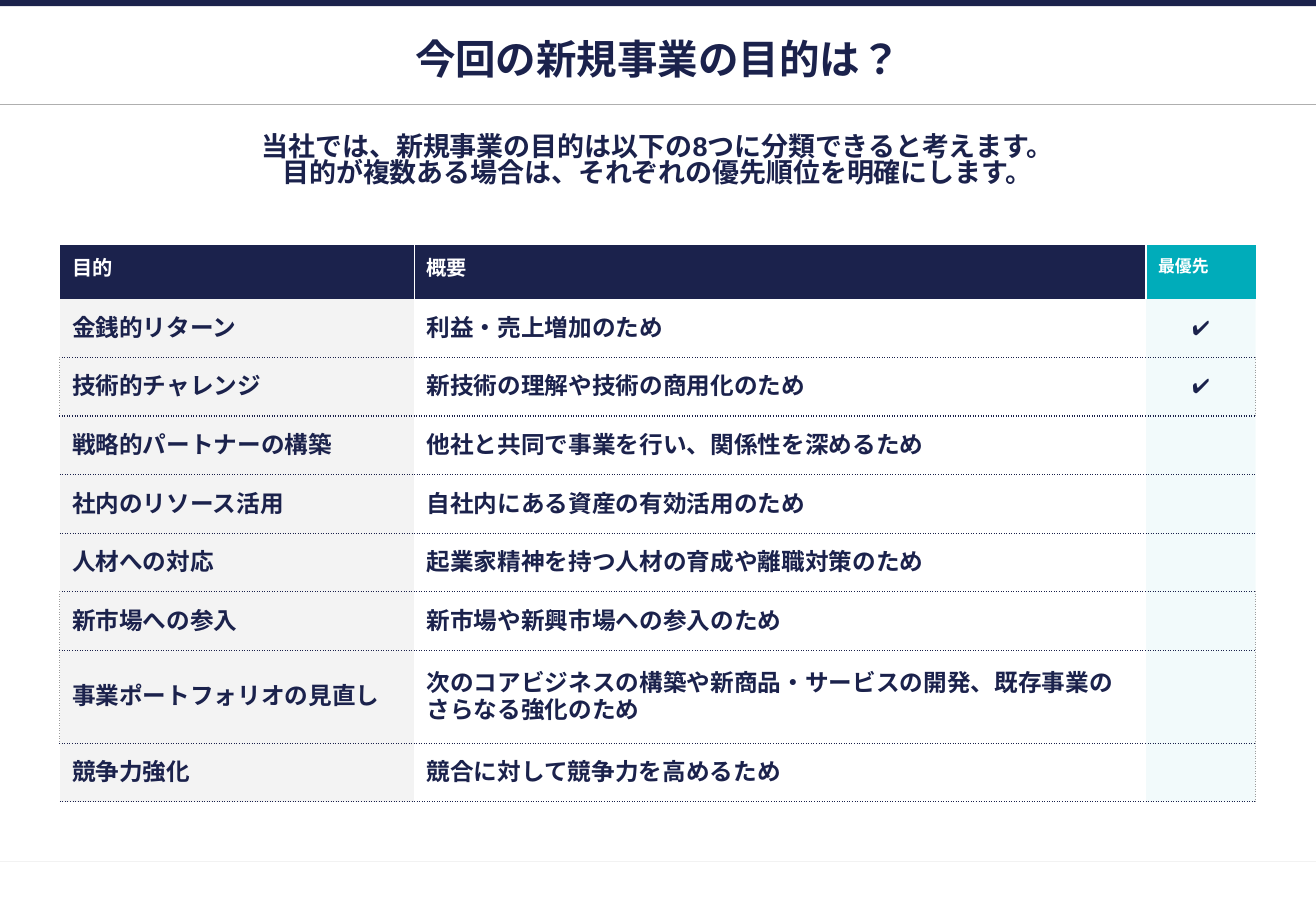
from lxml.etree import SubElement
from pptx import Presentation
from pptx.dml.color import RGBColor
from pptx.enum.lang import MSO_LANGUAGE_ID as Lang
from pptx.enum.shapes import MSO_CONNECTOR as Connector, MSO_SHAPE as Shape
from pptx.enum.text import MSO_ANCHOR as Anchor, MSO_AUTO_SIZE as AutoSize, PP_ALIGN as Align
from pptx.oxml.ns import qn
from pptx.util import Pt

TITLE = "今回の新規事業の目的は？"
LEAD = [
    "当社では、新規事業の目的は以下の8つに分類できると考えます。",
    "目的が複数ある場合は、それぞれの優先順位を明確にします。",
]
HEADER = ("目的", "概要", "最優先")
PURPOSES = [
    ("金銭的リターン", "利益・売上増加のため", "✔"),
    ("技術的チャレンジ", "新技術の理解や技術の商用化のため", "✔"),
    ("戦略的パートナーの構築", "他社と共同で事業を行い、関係性を深めるため", ""),
    ("社内のリソース活用", "自社内にある資産の有効活用のため", ""),
    ("人材への対応", "起業家精神を持つ人材の育成や離職対策のため", ""),
    ("新市場への参入", "新市場や新興市場への参入のため", ""),
    ("事業ポートフォリオの見直し",
     "次のコアビジネスの構築や新商品・サービスの開発、既存事業のさらなる強化のため", ""),
    ("競争力強化", "競合に対して競争力を高めるため", ""),
]
LEFT_DOTTED = (2, 6, 7)
RIGHT_DOTTED = (2, 6, 7, 8)

NAVY, TEAL, WHITE, GRAY = "1B224C", "00ACBA", "FFFFFF", "9E9E9E"
HEADER_FILLS = (NAVY, NAVY, TEAL)
BODY_FILLS = ("F3F3F3", WHITE, "00ACBB")
HEADER_SIZES, BODY_SIZES = (12, 12, 10), (14, 14, 12)
FONT = "Arial"
PAGE_WIDTH, PAGE_HEIGHT = 780, 540
COLUMN_WIDTHS = (210.2, 433.6, 65)
HEADER_HEIGHT, ROW_HEIGHT, TALL_ROW, TALL_HEIGHT = 32, 34.75, 7, 55
NO_STYLE = "{2D5ABB26-0587-4C30-8999-92F81FD0307C}"


def rgb(color):
    return RGBColor.from_string(color)


def write(frame, lines, size, color=NAVY, align=Align.LEFT, anchor=Anchor.TOP, spacing=None):
    frame.word_wrap = True
    frame.vertical_anchor = anchor
    for index, line in enumerate(lines):
        para = frame.paragraphs[0] if index == 0 else frame.add_paragraph()
        para.alignment = align
        para.line_spacing = spacing
        span = para.add_run()
        span.text = line
        font = span.font
        font.size, font.bold, font.name = Pt(size), True, FONT
        font.color.rgb = rgb(color)
        font.language_id = Lang.JAPANESE
        SubElement(span._r.get_or_add_rPr(), qn("a:ea"), typeface=FONT)


def set_margins(box, left, top, right, bottom):
    box.margin_left, box.margin_top = Pt(left), Pt(top)
    box.margin_right, box.margin_bottom = Pt(right), Pt(bottom)


def place(shape, left, top, width, height):
    shape.left, shape.top, shape.width, shape.height = map(Pt, (left, top, width, height))


def add_rule(page, y, color):
    rule = page.shapes.add_connector(Connector.STRAIGHT, 0, Pt(y), Pt(PAGE_WIDTH), Pt(y))
    rule.line.color.rgb = rgb(color)
    rule.line.width = Pt(0.75)
    SubElement(rule._element.spPr, qn("a:effectLst"))


def set_borders(cell, borders):
    """Draw {side: (color, dash)}; call before the fill is set."""
    properties = cell._tc.get_or_add_tcPr()
    for side in "LRTB":
        if side in borders:
            color, dash = borders[side]
            line = SubElement(properties, qn(f"a:ln{side}"), w=str(Pt(0.75)))
            fill = SubElement(line, qn("a:solidFill"))
            SubElement(fill, qn("a:srgbClr"), val=color)
            SubElement(line, qn("a:prstDash"), val=dash)


def cell_borders(row, column):
    last = len(HEADER) - 1
    borders = {}
    if row == 0:
        if column > 0:
            borders["L"] = (WHITE, "solid")
        if column < last:
            borders["R"] = (WHITE, "solid")
        return borders
    borders["B"] = (NAVY, "dot")
    if row > 1:
        borders["T"] = (NAVY, "dot")
    if column == 0 and row in LEFT_DOTTED:
        borders["L"] = (GRAY, "dot")
    if column == last and row in RIGHT_DOTTED:
        borders["R"] = (GRAY, "dot")
    return borders


def fill_cell(cell, text, row, column):
    is_header = row == 0
    is_priority = column == len(HEADER) - 1
    set_borders(cell, cell_borders(row, column))
    cell.fill.solid()
    cell.fill.fore_color.rgb = rgb((HEADER_FILLS if is_header else BODY_FILLS)[column])
    if is_priority and not is_header:
        tint = cell._tc.tcPr.find(qn("a:solidFill")).find(qn("a:srgbClr"))
        SubElement(tint, qn("a:alpha"), val="5000")
    if not text:
        return
    set_margins(cell, 7.2, 7.2, 7.2, 7.2)
    write(cell.text_frame, [text], (HEADER_SIZES if is_header else BODY_SIZES)[column],
          color=WHITE if is_header else NAVY,
          align=Align.CENTER if is_priority and not is_header else Align.LEFT)
    cell.vertical_anchor = Anchor.TOP if is_header else Anchor.MIDDLE


def add_purpose_table(page):
    rows = [HEADER, *PURPOSES]
    heights = [HEADER_HEIGHT] + [ROW_HEIGHT] * len(PURPOSES)
    heights[TALL_ROW] = TALL_HEIGHT
    frame = page.shapes.add_table(len(rows), len(HEADER), Pt(35.5), Pt(145.2),
                                  Pt(sum(COLUMN_WIDTHS)), Pt(sum(heights)))
    table = frame.table
    table.horz_banding = False
    table._tbl.tblPr.find(qn("a:tableStyleId")).text = NO_STYLE
    for column, width in zip(table.columns, COLUMN_WIDTHS):
        column.width = Pt(width)
    for row, height in zip(table.rows, heights):
        row.height = Pt(height)
    for row, texts in enumerate(rows):
        for column, text in enumerate(texts):
            fill_cell(table.cell(row, column), text, row, column)


def main():
    deck = Presentation()
    deck.slide_width, deck.slide_height = Pt(PAGE_WIDTH), Pt(PAGE_HEIGHT)
    page = deck.slides.add_slide(deck.slide_layouts[5])

    add_rule(page, 510.5, "F2F2F2")
    band = page.shapes.add_shape(Shape.RECTANGLE, 0, 0, Pt(PAGE_WIDTH), Pt(3.75))
    band.shadow.inherit = False
    band.fill.solid()
    band.fill.fore_color.rgb = rgb(NAVY)
    band.line.fill.background()
    add_rule(page, 62, "AFAFAF")

    title = page.shapes.title
    place(title, 36, 21, 708, 28)
    title.text_frame.auto_size = AutoSize.NONE
    set_margins(title.text_frame, 3, 3, 3, 3.5)
    write(title.text_frame, [TITLE], 24, align=Align.CENTER, anchor=Anchor.MIDDLE)

    lead = page.shapes.add_textbox(Pt(36), Pt(77), Pt(708), Pt(54))
    set_margins(lead.text_frame, 3, 3, 3, 3)
    write(lead.text_frame, LEAD, 16, align=Align.CENTER, spacing=0.82)

    add_purpose_table(page)
    deck.save("out.pptx")


if __name__ == "__main__":
    main()
